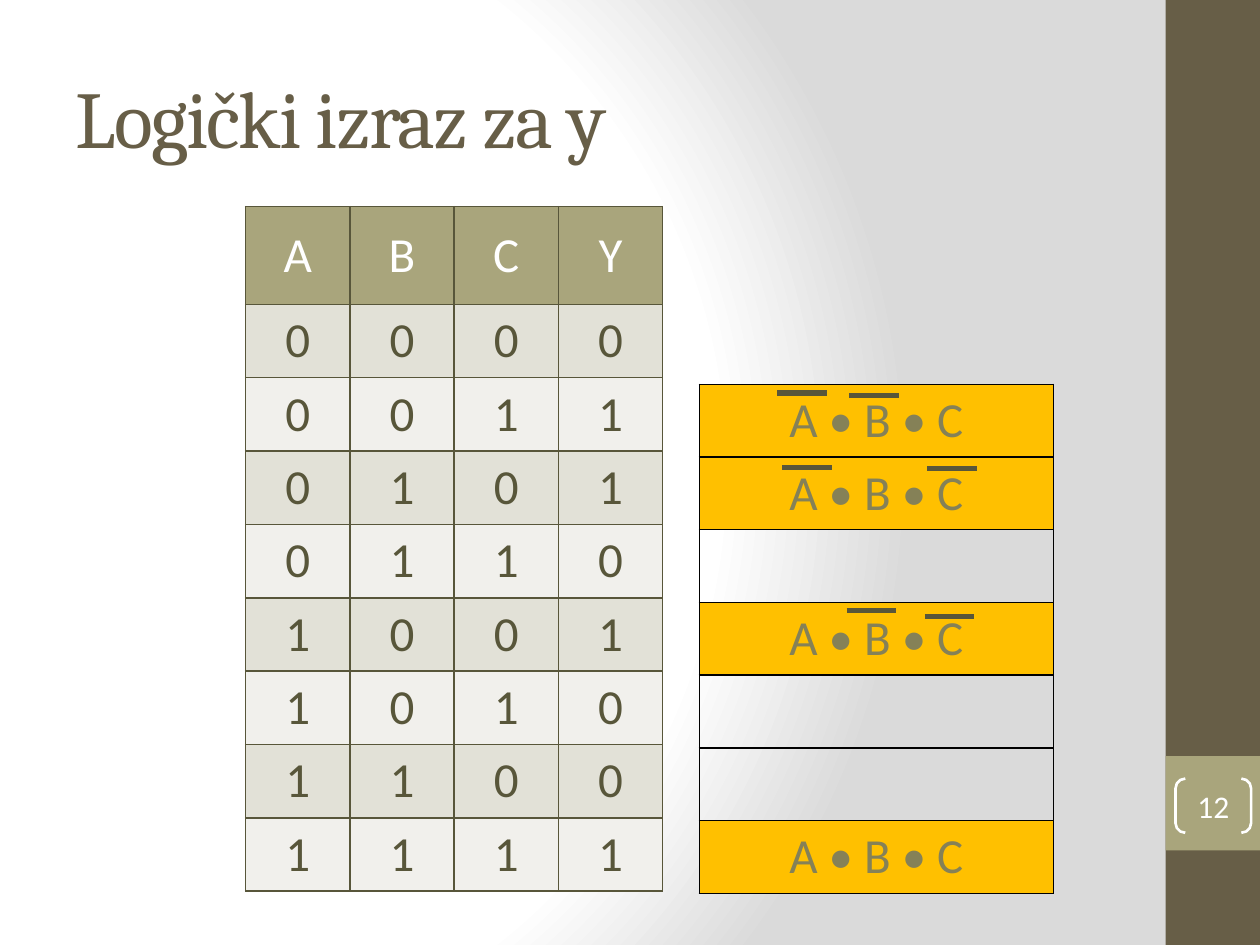
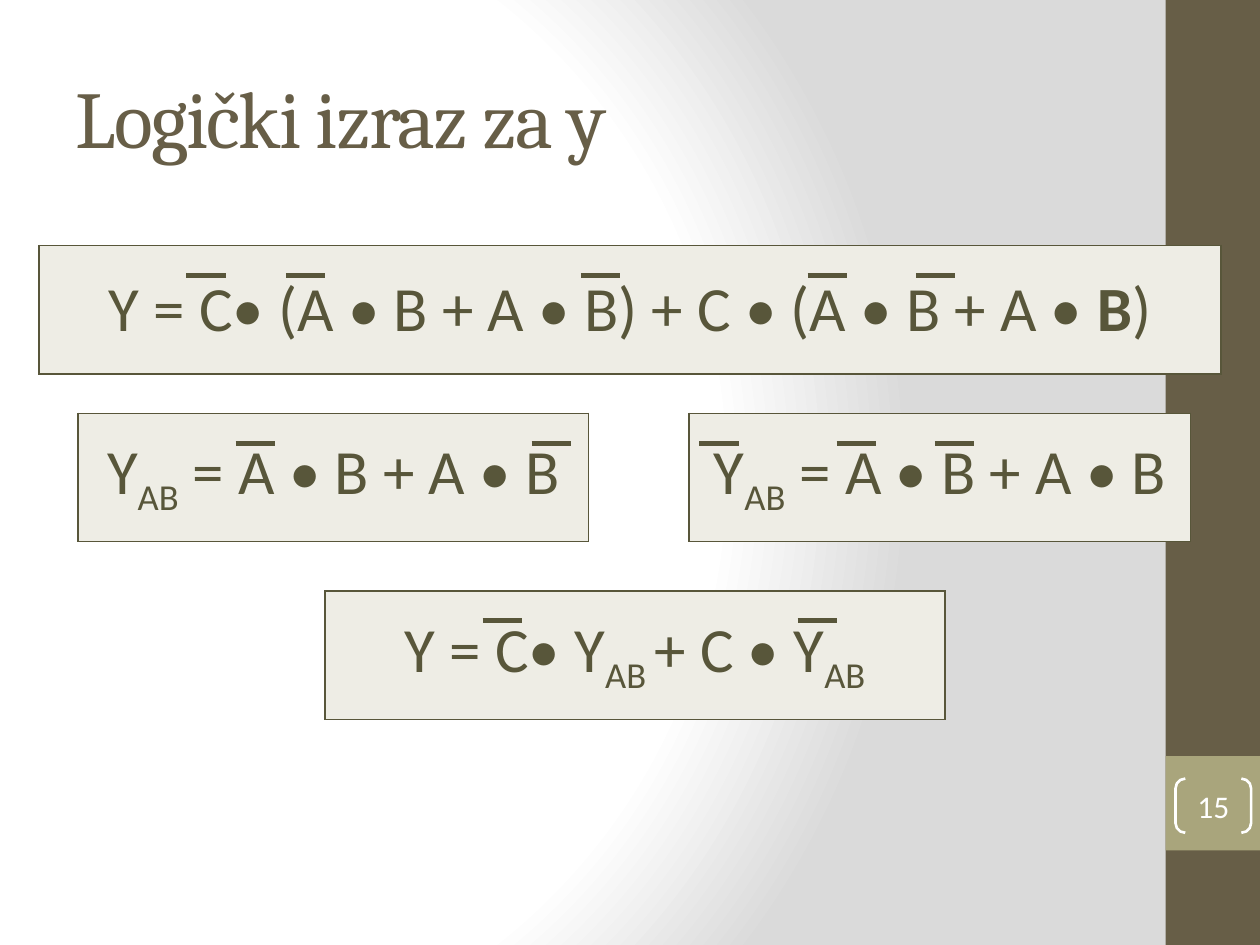
from itertools import product

from pptx import Presentation
from pptx.dml.color import RGBColor
from pptx.enum.shapes import MSO_CONNECTOR, MSO_SHAPE
from pptx.enum.text import MSO_ANCHOR, PP_ALIGN
from pptx.oxml import parse_xml
from pptx.oxml.ns import qn
from pptx.util import Inches, Pt

RECTANGLE, BRACKETS = MSO_SHAPE.RECTANGLE, MSO_SHAPE.DOUBLE_BRACKET
STRAIGHT = MSO_CONNECTOR.STRAIGHT
MIDDLE, BOTTOM = MSO_ANCHOR.MIDDLE, MSO_ANCHOR.BOTTOM
LEFT, CENTER = PP_ALIGN.LEFT, PP_ALIGN.CENTER

# The slide is a grid of 40 columns and 30 rows
COLUMNS, ROWS, UNIT = 40, 30, Inches(0.25)
COLORS = {
    "white": "FFFFFF", "shade": "DADADA", "brown": "675E47", "olive": "A9A57C",
    "ink": "58563A", "term": "858157", "amber": "FFC000", "black": "000000",
    "odd": "E2E1D7", "even": "F1F0EC", "formula": "EEEDE5",
}
HEADING, BODY = "Cambria", "Calibri"
TITLE = "Logički izraz za y"
NAMESPACE = 'xmlns:a="http://schemas.openxmlformats.org/drawingml/2006/main"'

# Each term row: its text and the (left, top) of the negation bars in the row
TERM = "A • B • C"
TERM_ROWS = [
    (TERM, [(2.48, 0.28), (4.76, 0.36)]),
    (TERM, [(2.64, 0.32), (7.24, 0.36)]),
    None,
    (TERM, [(4.68, 0.25), (7.16, 0.44)]),
    None,
    None,
    (TERM, []),
]

# Each formula: left, top, width, styled runs, left of each negation bar
FORMULAS = [
    (1.24, 7.8, 37.52,
     [("Y = C• (A • B + A • B) + C • (A • B + A • ", ""), ("B", "bold"), (")", "")],
     [4.68, 7.84, 17.2, 24.4, 27.84]),
    (21.88, 13.12, 15.92,
     [("Y", ""), ("AB", "sub"), (" = A • B + A • B", "")],
     [0.32, 4.68, 7.8]),
    (2.48, 13.12, 16.2,
     [("Y", ""), ("AB", "sub"), (" = A • B + A • B", "")],
     [5, 14.4]),
    (10.32, 18.76, 19.68,
     [("Y = C• Y", ""), ("AB ", "sub"), ("+ C • Y", ""), ("AB", "sub")],
     [5, 15]),
]


def grid(*lengths):
    return [int(length * UNIT) for length in lengths]


def color(name):
    return RGBColor.from_string(COLORS[name])


def write(para, runs, size, ink, font=BODY, align=CENTER):
    para.alignment = align
    for text, style in runs:
        span = para.add_run()
        span.text = text
        span.font.name, span.font.size = font, Pt(size)
        span.font.bold = style == "bold"
        span.font.color.rgb = color(ink)
        if style == "sub":
            span.font._element.set("baseline", "-25000")


def add_block(page, preset, box, fill=None):
    block = page.shapes.add_shape(preset, *grid(*box))
    block.shadow.inherit = False
    if fill:
        block.fill.solid()
        block.fill.fore_color.rgb = color(fill)
    else:
        block.fill.background()
    block.line.fill.background()
    return block


def add_bar(page, left, top, length):
    bar = page.shapes.add_connector(STRAIGHT, *grid(left, top, left + length, top))
    bar.line.color.rgb = color("ink")
    bar.line.width = Pt(3)
    bar.element.spPr.append(parse_xml(f"<a:effectLst {NAMESPACE}/>"))


# Tables
def add_grid_table(page, left, top, width, heights, columns=1):
    box = grid(left, top, width, sum(heights))
    table = page.shapes.add_table(len(heights), columns, *box).table
    table.first_row = table.horz_banding = False
    for row, height in zip(table.rows, heights):
        row.height = grid(height)[0]
    return table


def format_cell(cell, fill, border, anchor=MIDDLE):
    cell.vertical_anchor = anchor
    if anchor == MIDDLE:
        cell.margin_left = cell.margin_right = Inches(0.07)
        cell.margin_top = cell.margin_bottom = 0
    if fill:
        cell.fill.solid()
        cell.fill.fore_color.rgb = color(fill)
    else:
        cell.fill.background()
    properties = cell._tc.get_or_add_tcPr()
    for index, side in enumerate(("lnL", "lnR", "lnT", "lnB")):
        properties.insert(index, parse_xml(
            f'<a:{side} {NAMESPACE} w="12700"><a:solidFill>'
            f'<a:srgbClr val="{COLORS[border]}"/></a:solidFill></a:{side}>'))


def add_truth_table(page, left, top):
    inputs = product((0, 1), repeat=3)
    rows = ["ABCY"] + [(a, b, c, a ^ b ^ c) for a, b, c in inputs]
    heights = [3.1] + [2.33] * 8
    table = add_grid_table(page, left, top, 13.24, heights, 4)
    for row, values in enumerate(rows):
        fill = "olive" if row == 0 else "odd" if row % 2 else "even"
        ink = "ink" if row else "white"
        for column, value in enumerate(values):
            cell = table.cell(row, column)
            format_cell(cell, fill, "ink")
            write(cell.text_frame.paragraphs[0], [(str(value), "")], 28, ink)


def add_term_table(page, left, top):
    height = 2.31
    table = add_grid_table(page, left, top, 11.24, [height] * len(TERM_ROWS))
    for row, term in enumerate(TERM_ROWS):
        cell = table.cell(row, 0)
        format_cell(cell, "amber" if term else None, "black", BOTTOM)
        if term:
            text, bars = term
            write(cell.text_frame.paragraphs[0], [(text, "")], 28, "term")
            for bar_left, bar_top in bars:
                add_bar(page, left + bar_left, top + row * height + bar_top, 1.57)


def add_formula(page, left, top, width, runs, bars):
    cell = add_grid_table(page, left, top, width, [4.08]).cell(0, 0)
    format_cell(cell, "formula", "ink")
    write(cell.text_frame.paragraphs[0], runs, 36, "ink")
    for bar_left in bars:
        add_bar(page, left + bar_left, top + 0.95, 1.25)


# Shared frame
def set_background(master):
    master.background.fill.solid()
    properties = master.element.find(".//" + qn("p:bgPr"))
    stops = "".join(
        f'<a:gs pos="{share * 1000}"><a:srgbClr val="{COLORS[name]}"/></a:gs>'
        for share, name in ((0, "white"), (75, "white"), (100, "shade")))
    properties.replace(properties[0], parse_xml(
        f'<a:gradFill {NAMESPACE} rotWithShape="1"><a:gsLst>{stops}</a:gsLst>'
        '<a:path path="circle"><a:fillToRect l="20000" t="50000" r="100000" '
        'b="50000"/></a:path></a:gradFill>'))


def move_bands_to_master(page, master):
    bands = [add_block(page, RECTANGLE, (37, 0, 3, ROWS), "brown"),
             add_block(page, RECTANGLE, (37, 24, 3, 3), "olive")]
    for index, band in enumerate(bands):
        band.element.find(".//" + qn("p:cNvPr")).set("id", str(100 + index))
        master.shapes.element.insert(2 + index, band.element)


def add_page(deck, number):
    page = deck.slides.add_slide(deck.slide_layouts[5])
    # Title
    title = page.shapes.title
    title.left, title.top, title.width, title.height = grid(2, 1.2, 33.32, 5)
    title.text_frame.vertical_anchor = MIDDLE
    para = title.text_frame.paragraphs[0]
    write(para, [(TITLE, "")], 46, "brown", HEADING, LEFT)
    para.runs[0].font._element.set("spc", "-100")
    # Page number
    badge = add_block(page, BRACKETS, (37.32, 24.72, 2.4, 1.72))
    badge.adjustments[0] = 0.18
    badge.line.color.rgb = color("white")
    badge.line.width = Pt(1.5)
    frame = badge.text_frame
    frame.margin_left = frame.margin_right = 0
    frame.margin_top = frame.margin_bottom = 0
    frame.vertical_anchor = MIDDLE
    write(frame.paragraphs[0], [(str(number), "")], 18, "white")
    return page


def main():
    deck = Presentation()
    deck.slide_width, deck.slide_height = grid(COLUMNS, ROWS)
    set_background(deck.slide_master)

    truth_page = add_page(deck, 12)
    move_bands_to_master(truth_page, deck.slide_master)
    add_truth_table(truth_page, 7.8, 6.56)
    add_term_table(truth_page, 22.2, 12.2)

    formula_page = add_page(deck, 15)
    for formula in FORMULAS:
        add_formula(formula_page, *formula)

    deck.save("out.pptx")


if __name__ == "__main__":
    main()
